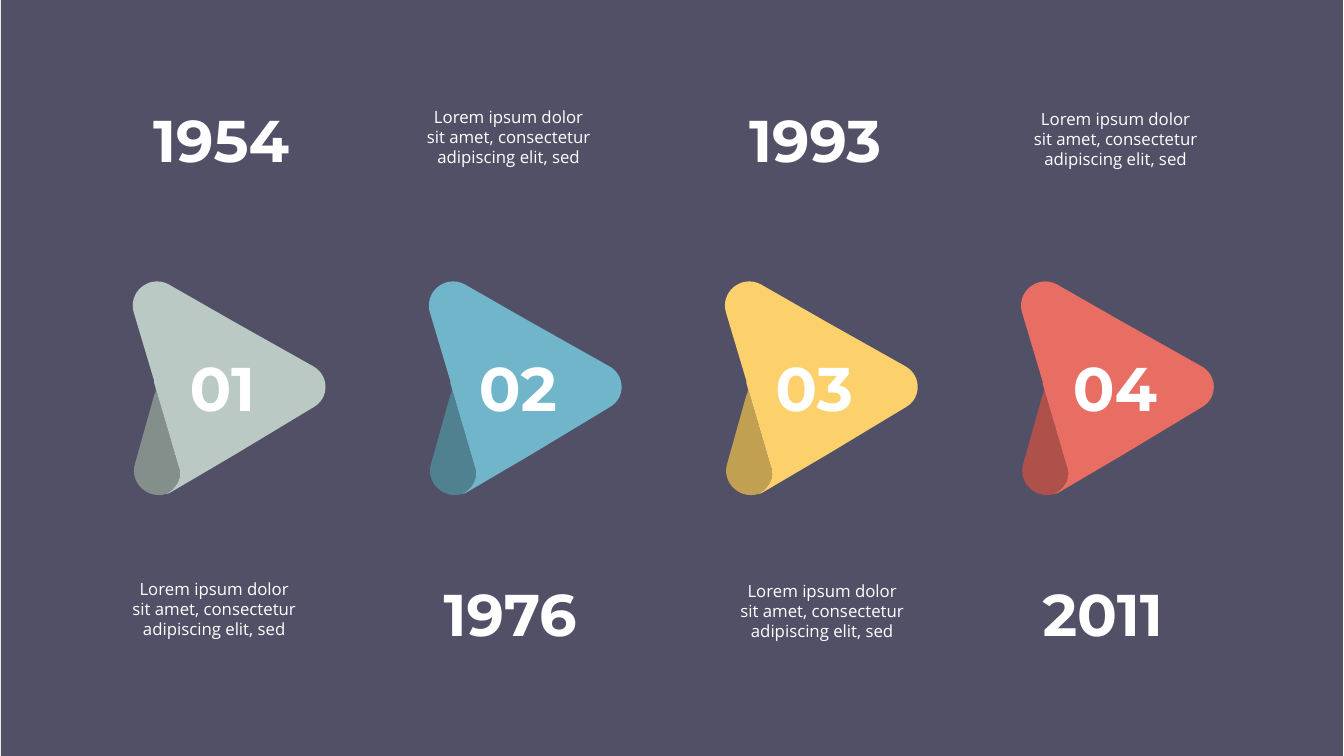
"""Build a timeline slide of four folded arrows with years and captions."""
from dataclasses import dataclass

from pptx import Presentation
from pptx.dml.color import RGBColor
from pptx.enum.shapes import MSO_SHAPE
from pptx.enum.text import PP_ALIGN
from pptx.oxml.ns import qn
from pptx.util import Inches, Pt

RECTANGLE = MSO_SHAPE.RECTANGLE
LEFT, CENTER = PP_ALIGN.LEFT, PP_ALIGN.CENTER
COLORS = {
    "background": "525067", "text": "FFFFFF",
    "sage": "BAC9C4", "sage fold": "848E8B",
    "blue": "71B5CB", "blue fold": "508190",
    "yellow": "FCD06A", "yellow fold": "C1A051",
    "red": "E86D63", "red fold": "AD514A",
}
CAPTION = "Lorem ipsum dolor sit amet, consectetur adipiscing elit, sed"
PITCH = 8.81 / 3

Point = tuple[float, float]
Outline = list[list[Point]]

FOLD: Outline = [
    [(1.77, 4.62)],
    [(1.53, 3.8)],
    [(1.55, 3.85), (1.55, 3.89), (1.53, 3.92)],
    [(1.34, 4.6)],
    [(1.28, 4.79), (1.47, 4.96), (1.65, 4.9)],
    [(1.75, 4.85), (1.82, 4.73), (1.77, 4.62)],
]
ARROW: Outline = [
    [(1.65, 4.9)],
    [(1.67, 4.9), (1.68, 4.89), (1.7, 4.88)],
    [(2.33, 4.51)],
    [(3.11, 4.04)],
    [(3.27, 3.95), (3.27, 3.72), (3.1, 3.63)],
    [(2.3, 3.18)],
    [(1.67, 2.82)],
    [(1.48, 2.72), (1.26, 2.9), (1.33, 3.11)],
    [(1.53, 3.78)],
    [(1.53, 3.8)],
    [(1.77, 4.62)],
    [(1.82, 4.73), (1.75, 4.85), (1.65, 4.9)],
]


@dataclass
class Box:
    left: float
    top: float
    width: float
    height: float


@dataclass
class TextStyle:
    font: str
    size: int
    bold: bool
    align: PP_ALIGN
    inset: Point


@dataclass
class Milestone:
    color: str
    number: str
    number_box: Box
    year: str
    year_box: Box
    caption_box: Box


NUMBER = TextStyle("Montserrat", 44, True, LEFT, (0, 0))
YEAR = TextStyle("Montserrat", 42, True, LEFT, (0, 0))
BODY = TextStyle("Open Sans", 12, False, CENTER, (0.1, 0.05))

MILESTONES = [
    Milestone("sage", "01", Box(1.88, 3.47, 1.03, 0.91),
              "1954", Box(1.52, 1.03, 1.63, 0.85), Box(1.2, 5.69, 1.85, 0.7)),
    Milestone("blue", "02", Box(4.75, 3.47, 1.15, 0.91),
              "1976", Box(4.4, 5.73, 1.64, 0.85), Box(4.12, 1.01, 1.85, 0.7)),
    Milestone("yellow", "03", Box(7.69, 3.47, 1.15, 0.91),
              "1993", Box(7.43, 1.03, 1.65, 0.85), Box(7.23, 5.71, 1.85, 0.7)),
    Milestone("red", "04", Box(10.64, 3.47, 1.14, 0.91),
              "2011", Box(10.34, 5.73, 1.57, 0.85), Box(10.14, 1.03, 1.85, 0.7)),
]


def paint(s, color: str) -> None:
    """Fill a shape with a plain colour, without line or shadow."""
    s.fill.solid()
    s.fill.fore_color.rgb = RGBColor.from_string(COLORS[color])
    s.line.fill.background()
    s.shadow.inherit = False


def add_outline(shapes, outline: Outline, shift: float, color: str) -> None:
    """Draw lines (one point) and cubic curves (three points), moved right by the shift."""
    points = [(Inches(x + shift), Inches(y)) for segment in outline for x, y in segment]
    builder = shapes.build_freeform(*points[0])
    builder.add_line_segments(points[1:], close=True)
    s = builder.convert_to_shape()
    lines = iter(list(s._element.iter(qn("a:lnTo"))))
    for segment in outline[1:]:
        first, *others = [next(lines) for _ in segment]
        if others:
            first.tag = qn("a:cubicBezTo")
        for line in others:
            first.append(line[0])
            line.getparent().remove(line)
    paint(s, color)


def add_text(shapes, text: str, box: Box, style: TextStyle) -> None:
    """Add a text box in the given style."""
    tf = shapes.add_textbox(Inches(box.left), Inches(box.top),
                            Inches(box.width), Inches(box.height)).text_frame
    tf.word_wrap = True
    tf.margin_left = tf.margin_right = Inches(style.inset[0])
    tf.margin_top = tf.margin_bottom = Inches(style.inset[1])
    p = tf.paragraphs[0]
    p.text = text
    p.alignment = style.align
    p.font.name = style.font
    p.font.size = Pt(style.size)
    p.font.bold = style.bold
    p.font.color.rgb = RGBColor.from_string(COLORS["text"])


def main() -> None:
    """Build and save the slide."""
    prs = Presentation()
    prs.slide_width, prs.slide_height = Inches(13.33), Inches(7.5)
    shapes = prs.slides.add_slide(prs.slide_layouts[6]).shapes
    paint(shapes.add_shape(RECTANGLE, Inches(0.01), 0, Inches(13.31), Inches(7.5)),
          "background")
    for i, m in enumerate(MILESTONES):
        add_outline(shapes, FOLD, i * PITCH, f"{m.color} fold")
        add_outline(shapes, ARROW, i * PITCH, m.color)
    for m in MILESTONES:
        add_text(shapes, m.number, m.number_box, NUMBER)
    for m in MILESTONES:
        add_text(shapes, m.year, m.year_box, YEAR)
    for m in MILESTONES:
        add_text(shapes, CAPTION, m.caption_box, BODY)
    prs.save("out.pptx")


if __name__ == "__main__":
    main()
